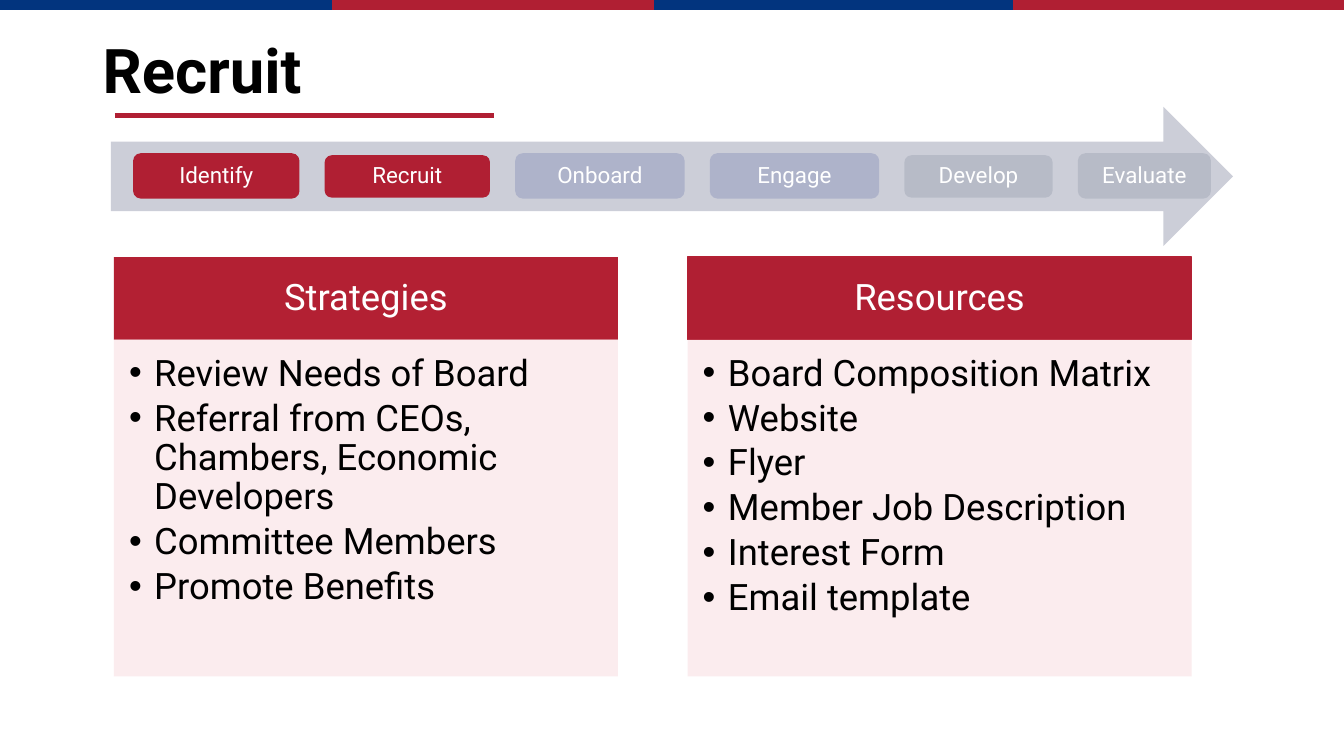
from dataclasses import dataclass
from itertools import pairwise

from lxml import etree
from pptx import Presentation, util as u
from pptx.dml.color import RGBColor
from pptx.enum import shapes, text
from pptx.oxml import ns

PX = 9144  # 100 px to the inch


@dataclass(frozen=True)
class Theme:
    font: str = "Roboto"
    navy: str = "02347E"
    red: str = "B01F33"
    header_red: str = "B32033"
    pink: str = "F6CCD2"
    arrow: str = "CCCED8"
    blue: str = "061A80"
    slate: str = "44546A"
    white: str = "FFFFFF"
    black: str = "000000"
    title: int = 44
    body: int = 26
    step: int = 16


THEME = Theme()


def px(*lengths):
    return [u.Emu(length * PX) for length in lengths]


def add_element(parent, tag, **attributes):
    return etree.SubElement(parent, ns.qn(tag), attributes)


def add_rule(page, start, end, y, color, weight):
    rule = page.shapes.add_connector(
        shapes.MSO_CONNECTOR.STRAIGHT, *px(start, y, end, y))
    rule.line.color.rgb = RGBColor.from_string(color)
    rule.line.width = u.Pt(weight)
    add_element(rule._element.spPr, "a:effectLst")


def add_block(page, kind, box, color, opacity=100):
    block = page.shapes.add_shape(kind, *px(*box))
    block.shadow.inherit = False
    block.fill.solid()
    block.fill.fore_color.rgb = RGBColor.from_string(color)
    block.line.fill.background()
    if opacity < 100:
        fill = block._element.spPr.find(ns.qn("a:solidFill"))
        add_element(fill[0], "a:alpha", val=str(opacity * 1000))
    return block


def write(shape, lines, size, color, insets, anchor=text.MSO_ANCHOR.MIDDLE,
          align=text.PP_ALIGN.CENTER, bold=False, bullets=False):
    frame = shape.text_frame
    frame.word_wrap = True
    frame.vertical_anchor = anchor
    (frame.margin_left, frame.margin_top,
     frame.margin_right, frame.margin_bottom) = px(*insets)
    for index, line in enumerate(lines):
        para = frame.paragraphs[0] if index == 0 else frame.add_paragraph()
        para.text = line
        para.alignment = align
        para.line_spacing = 0.9
        if bullets:
            para.space_after = u.Pt(4)
            props = para._p.get_or_add_pPr()
            props.set("marL", str(25 * PX))
            props.set("indent", str(-25 * PX))
            add_element(props, "a:buFont", typeface="Arial")
            add_element(props, "a:buChar", char="•")
        para.font.name = THEME.font
        para.font.size = u.Pt(size)
        para.font.bold = bold
        para.font.color.rgb = RGBColor.from_string(color)


def add_top_stripe(page, box):
    left, top, width, height = box
    edges = [left, 329, 649, 1005, left + width]
    for index, (start, end) in enumerate(pairwise(edges)):
        color = THEME.red if index % 2 else THEME.navy
        add_rule(page, start, end, top + height // 2, color, 8)


def add_title(page, box, title):
    left, top, width, height = box
    add_rule(page, left + 22, left + 398, top + 115, THEME.red, 3.5)
    heading = page.shapes.add_textbox(*px(*box))
    write(heading, [title], THEME.title, THEME.black, (10, 5, 10, 5),
          align=text.PP_ALIGN.LEFT, bold=True)


def add_process(page, box, steps):
    left, top, width, height = box
    add_block(page, shapes.MSO_SHAPE.RIGHT_ARROW, box, THEME.arrow)
    x, gap = left + 22, 25
    for label, step_width, step_height, color, opacity in steps:
        y = top + (height - step_height) // 2
        step = add_block(page, shapes.MSO_SHAPE.ROUNDED_RECTANGLE,
                         (x, y, step_width, step_height), color, opacity)
        write(step, [label], THEME.step, THEME.white, (7, 7, 7, 7))
        x += step_width + gap


def add_column(page, box, heading, items, color, outlined):
    left, top, width, height = box
    header_height = 82
    header = add_block(page, shapes.MSO_SHAPE.RECTANGLE,
                       (left, top, width, header_height), color)
    if outlined:
        header.line.color.rgb = RGBColor.from_string(THEME.header_red)
        header.line.width = u.Pt(1)
    write(header, [heading], THEME.body, THEME.white, (20, 12, 20, 12))
    body = add_block(
        page, shapes.MSO_SHAPE.RECTANGLE,
        (left, top + header_height, width, height - header_height),
        THEME.pink, 37)
    write(body, items, THEME.body, THEME.black, (15, 15, 20, 23),
          anchor=text.MSO_ANCHOR.TOP, align=text.PP_ALIGN.LEFT, bullets=True)


def main():
    deck = Presentation()
    deck.slide_width, deck.slide_height = px(1333, 750)
    page = deck.slides.add_slide(deck.slide_layouts[6])

    # Heading
    add_top_stripe(page, (0, 0, 1333, 8))
    add_title(page, (92, 0, 1150, 145), "Recruit")

    # Two columns
    columns = [
        ("Strategies",
         ["Review Needs of Board",
          "Referral from CEOs, Chambers, Economic Developers",
          "Committee Members", "Promote Benefits"],
         THEME.header_red, False),
        ("Resources",
         ["Board Composition Matrix", "Website", "Flyer",
          "Member Job Description", "Interest Form", "Email template"],
         THEME.red, True),
    ]
    for index, column in enumerate(columns):
        add_column(page, (113 + index * 569, 255, 500, 416), *column)

    # Process arrow: label, width, height, colour, opacity
    add_process(page, (110, 106, 1113, 138), [
        ("Identify", 165, 45, THEME.red, 100),
        ("Recruit", 164, 42, THEME.red, 100),
        ("Onboard", 168, 45, THEME.blue, 15),
        ("Engage", 168, 45, THEME.blue, 15),
        ("Develop", 147, 42, THEME.slate, 15),
        ("Evaluate", 132, 45, THEME.slate, 15),
    ])

    deck.save("out.pptx")


if __name__ == "__main__":
    main()
